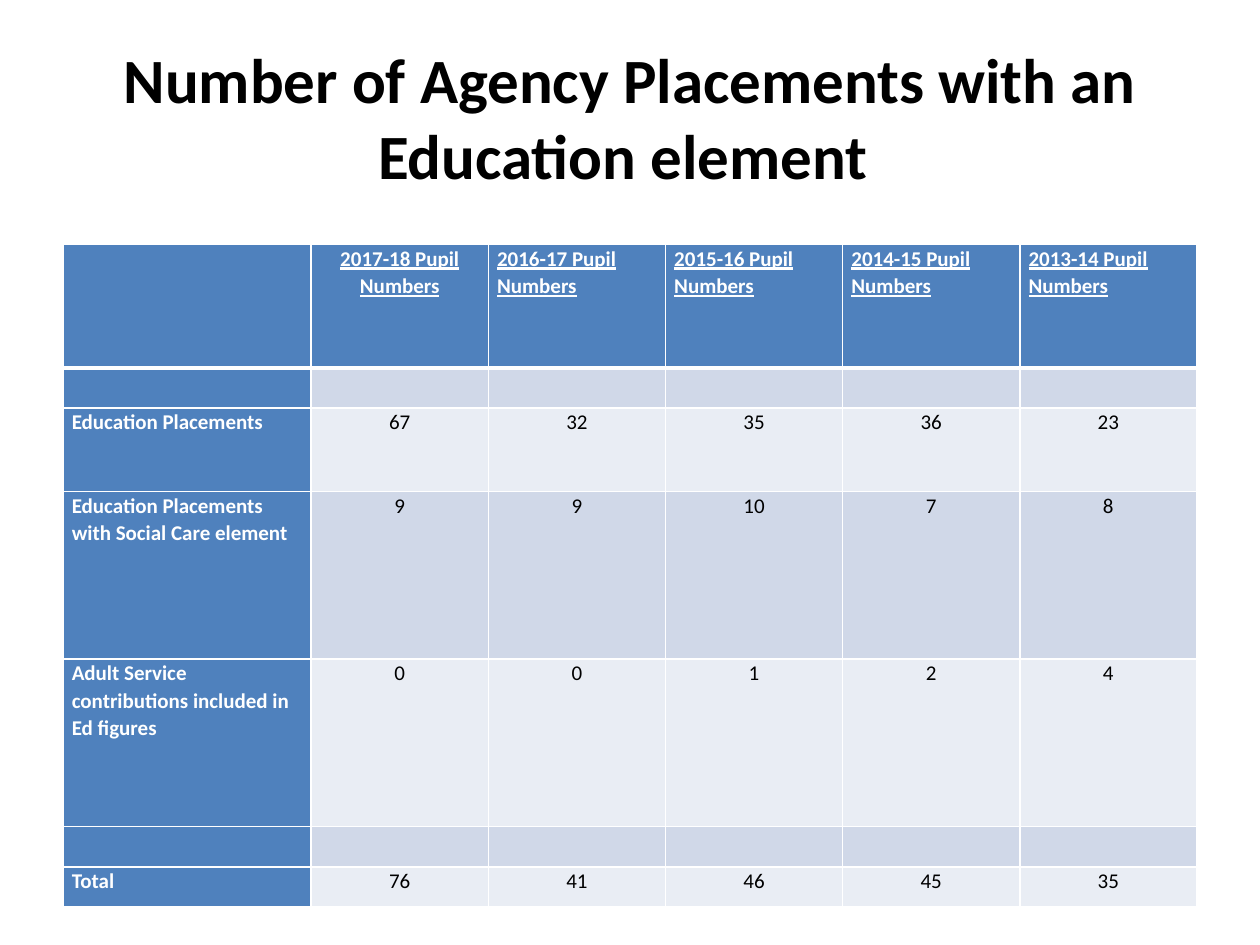
from lxml import etree
from pptx import Presentation
from pptx.dml.color import RGBColor
from pptx.enum.text import MSO_ANCHOR, PP_ALIGN
from pptx.oxml.ns import qn
from pptx.util import Inches, Pt

FONT = "Calibri"
BLACK = RGBColor(0x00, 0x00, 0x00)
WHITE = RGBColor(0xFF, 0xFF, 0xFF)
BLUE = RGBColor(0x4F, 0x81, 0xBD)
BANDS = [RGBColor(0xE9, 0xED, 0xF4), RGBColor(0xD0, 0xD8, 0xE8)]

YEARS = ["2017-18", "2016-17", "2015-16", "2014-15", "2013-14"]
BLANK_ROW = [""] * (len(YEARS) + 1)
ROWS = [
    [""] + [f"{year} Pupil Numbers" for year in YEARS],
    BLANK_ROW,
    ["Education Placements", 67, 32, 35, 36, 23],
    ["Education Placements with Social Care element", 9, 9, 10, 7, 8],
    ["Adult Service contributions included in Ed figures", 0, 0, 1, 2, 4],
    BLANK_ROW,
    ["Total", 76, 41, 46, 45, 35],
]
ROW_HEIGHTS = [0.98, 0.32, 0.66, 1.33, 1.33, 0.32, 0.32]
LABEL_WIDTH = 1.97


def style_font(font, size, color, bold):
    font.name = FONT
    font.size = Pt(size)
    font.bold = bold
    font.color.rgb = color


def add_title(page, left, top, width, height):
    title = page.shapes.title
    title.left, title.top = Inches(left), Inches(top)
    title.width, title.height = Inches(width), Inches(height)
    frame = title.text_frame
    frame.word_wrap = True
    frame.vertical_anchor = MSO_ANCHOR.MIDDLE
    para = frame.paragraphs[0]
    para.text = "Number of Agency Placements with an Education element "
    para.alignment = PP_ALIGN.CENTER
    style_font(para.font, 36, BLACK, True)


def set_borders(cell, widths):
    """Draw white cell borders; widths maps each side to points."""
    properties = cell._tc.get_or_add_tcPr()
    for side, points in widths.items():
        line = etree.SubElement(properties, qn(f"a:ln{side}"), w=str(Pt(points)))
        fill = etree.SubElement(line, qn("a:solidFill"))
        etree.SubElement(fill, qn("a:srgbClr"), val=str(WHITE))


def fill_cell(cell, row, column, value):
    is_header = row == 0
    is_blue = is_header or column == 0

    # Borders come before the fill, with a heavy rule under the header
    set_borders(cell, {"L": 1, "R": 1, "T": 3 if row == 1 else 1,
                       "B": 3 if is_header else 1})
    cell.fill.solid()
    cell.fill.fore_color.rgb = BLUE if is_blue else BANDS[row % 2]
    cell.margin_left = cell.margin_right = Inches(0.07)
    cell.margin_top = cell.margin_bottom = 0

    # Text: numbers and the first year are centred
    para = cell.text_frame.paragraphs[0]
    para.text = str(value)
    para.line_spacing = 1.07
    centred = column == 1 or (column > 1 and not is_header)
    para.alignment = PP_ALIGN.CENTER if centred else PP_ALIGN.LEFT
    style_font(para.font, 12, WHITE if is_blue else BLACK, is_blue)
    para.font.underline = is_header


def add_placement_table(page, left, top, width, height):
    table = page.shapes.add_table(
        len(ROWS), len(BLANK_ROW),
        Inches(left), Inches(top), Inches(width), Inches(height)).table
    year_width = (width - LABEL_WIDTH) / len(YEARS)
    for index, column in enumerate(table.columns):
        column.width = Inches(year_width if index else LABEL_WIDTH)
    for row, row_height in zip(table.rows, ROW_HEIGHTS):
        row.height = Inches(row_height)
    for row, values in enumerate(ROWS):
        for column, value in enumerate(values):
            fill_cell(table.cell(row, column), row, column, value)


def main():
    deck = Presentation()
    deck.slide_width, deck.slide_height = Inches(10), Inches(7.5)
    page = deck.slides.add_slide(deck.slide_layouts[5])
    add_title(page, 0.5, 0.3, 9, 1.25)
    add_placement_table(page, 0.5, 1.94, 9, sum(ROW_HEIGHTS))
    deck.save("out.pptx")


if __name__ == "__main__":
    main()
